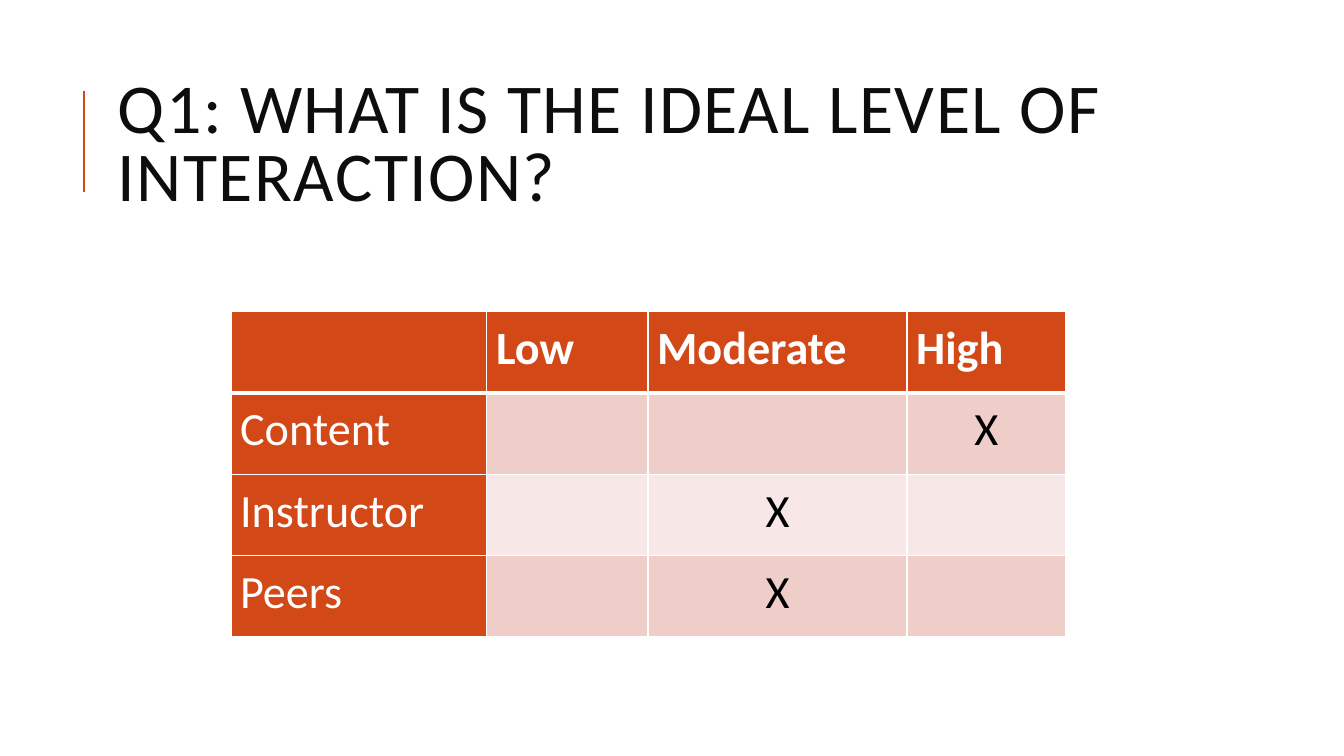
"""Build the slide on the ideal level of interaction."""
from lxml import etree
from pptx import Presentation
from pptx import util as u
from pptx.dml.color import RGBColor
from pptx.enum import shapes, text
from pptx.oxml.ns import qn

RUST = RGBColor(0xD3, 0x48, 0x17)
ROSE = RGBColor(0xEF, 0xCE, 0xCA)
PALE = RGBColor(0xF7, 0xE8, 0xE7)
INK = RGBColor(0x0D, 0x0D, 0x0D)
BLACK = RGBColor(0, 0, 0)
WHITE = RGBColor(0xFF, 0xFF, 0xFF)


def write(frame, words, size=33, color=WHITE, bold=False, center=False, gap=0, lead=None):
    """Put formatted words into a text frame."""
    para = frame.paragraphs[0]
    para.alignment = text.PP_ALIGN.CENTER if center else text.PP_ALIGN.LEFT
    para.line_spacing = lead
    run = para.add_run()
    run.text = words
    font = run.font
    font.name, font.size, font.bold = "Calibri", u.Pt(size), bold
    font.color.rgb = color
    if gap:
        run._r.get_or_add_rPr().set("spc", str(gap))


def edge(cell, side, width):
    """Draw one white side of a cell."""
    line = etree.SubElement(cell._tc.get_or_add_tcPr(), qn("a:ln" + side), w=str(u.Pt(width)))
    fill = etree.SubElement(line, qn("a:solidFill"))
    etree.SubElement(fill, qn("a:srgbClr"), val=str(WHITE))


deck = Presentation()
deck.slide_width, deck.slide_height = u.Cm(33.87), u.Cm(19.05)
slide = deck.slides.add_slide(deck.slide_layouts[6])

bar = slide.shapes.add_connector(
    shapes.MSO_CONNECTOR.STRAIGHT, u.Cm(2.12), u.Cm(4.83), u.Cm(2.12), u.Cm(2.29))
bar.line.color.rgb = RUST
bar.line.width = u.Pt(1.5)
etree.SubElement(bar._element.spPr, qn("a:effectLst"))

title = slide.shapes.add_textbox(u.Cm(2.84), u.Cm(1.63), u.Cm(27), u.Cm(4.17)).text_frame
title.word_wrap = True
title.vertical_anchor = text.MSO_ANCHOR.MIDDLE
title.margin_left = title.margin_right = u.Cm(0.13)
title.margin_top = title.margin_bottom = u.Cm(0.13)
write(title, "Q1: WHAT IS THE IDEAL LEVEL OF INTERACTION?", size=50, color=INK, gap=100, lead=0.8)

rows = [
    ["", "Low", "Moderate", "High"],
    ["Content", "", "", "X"],
    ["Instructor", "", "X", ""],
    ["Peers", "", "X", ""],
]
widths = [6.45, 4.06, 6.53, 3.99]
high = 2.05
grid = slide.shapes.add_table(
    len(rows), len(widths), u.Cm(5.82), u.Cm(7.85),
    u.Cm(sum(widths)), u.Cm(high * len(rows))).table
for col, width in zip(grid.columns, widths):
    col.width = u.Cm(width)

for r, row in enumerate(rows):
    grid.rows[r].height = u.Cm(high)
    for c, words in enumerate(row):
        cell = grid.cell(r, c)
        cell.margin_left = cell.margin_right = u.Cm(0.23)
        cell.margin_top = cell.margin_bottom = u.Cm(0.23)
        for side in "LRTB":
            thick = (side == "B" and r == 0) or (side == "T" and r == 1)
            edge(cell, side, 3 if thick else 1)
        head = r == 0 or c == 0
        cell.fill.solid()
        cell.fill.fore_color.rgb = RUST if head else ROSE if r % 2 else PALE
        if words:
            write(cell.text_frame, words, color=WHITE if head else BLACK,
                  bold=r == 0, center=not head)

deck.save("out.pptx")
